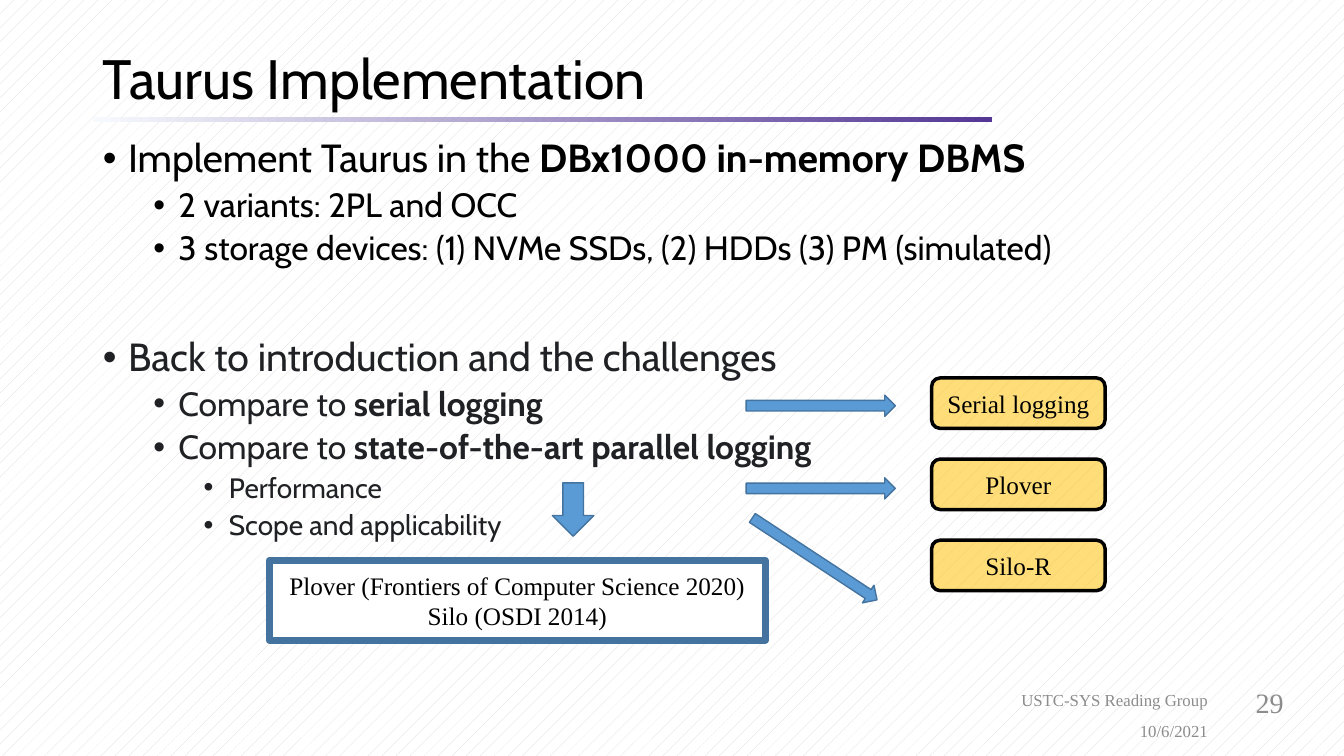
from lxml.etree import SubElement
from pptx import Presentation
from pptx.dml.color import RGBColor
from pptx.enum.dml import MSO_PATTERN
from pptx.enum.shapes import MSO_SHAPE
from pptx.enum.text import MSO_ANCHOR, MSO_AUTO_SIZE, PP_ALIGN
from pptx.oxml.ns import qn
from pptx.util import Inches, Pt

SERIF = "Times New Roman"
BLACK, DARK, GRAY = "000000", "202124", "8C8C8C"


def write(box, text, size, color, align, font=SERIF):
    frame = box.text_frame
    frame.word_wrap = True
    frame.auto_size = MSO_AUTO_SIZE.NONE
    frame.vertical_anchor = MSO_ANCHOR.MIDDLE
    frame.text = text
    for paragraph in frame.paragraphs:
        paragraph.alignment = align
        for span in paragraph.runs:
            span.font.name = font
            span.font.size = Pt(size)
            span.font.color.rgb = RGBColor.from_string(color)


def add_filled(kind, left, top, width, height, fill, line, line_width):
    shape = page.shapes.add_shape(kind, Inches(left), Inches(top), Inches(width), Inches(height))
    shape.shadow.inherit = False
    shape.fill.solid()
    shape.fill.fore_color.rgb = RGBColor.from_string(fill)
    shape.line.color.rgb = RGBColor.from_string(line)
    shape.line.width = Pt(line_width)
    return shape


deck = Presentation()
deck.slide_width, deck.slide_height = Inches(13.33), Inches(7.5)
page = deck.slides.add_slide(deck.slide_layouts[1])
background = page.background.fill
background.patterned()
background.pattern = MSO_PATTERN.PERCENT_5
background.fore_color.rgb = RGBColor.from_string("D9D9D9")
background.back_color.rgb = RGBColor.from_string("FFFFFF")

# Title and its underline
title = page.shapes.title
title.left, title.top, title.width, title.height = map(Inches, (0.92, 0.43, 11.5, 0.75))
write(title, "Taurus Implementation", 39.6, BLACK, PP_ALIGN.LEFT, "Cabin")
title.text_frame.paragraphs[0].line_spacing = 0.9

underline = add_filled(MSO_SHAPE.RECTANGLE, 0.92, 1.16, 8.92, 0.05, "543795", "543795", 1)
underline.line.fill.background()
underline.fill.gradient()
underline.fill.gradient_angle = 0
for stop, color in zip(underline.fill.gradient_stops, ("F7FAFD", "543795")):
    stop.color.rgb = RGBColor.from_string(color)

# Bullets: level, space before, colour, plain text, bold text
bullets = [
    (0, 0, BLACK, "Implement Taurus in the ", "DBx1000 in-memory DBMS"),
    (1, 5, BLACK, "2 variants: 2PL and OCC", ""),
    (1, 5, BLACK, "3 storage devices: (1) NVMe SSDs, (2) HDDs (3) PM (simulated)", ""),
    (0, 50, DARK, "Back to introduction and the challenges", ""),
    (1, 5, DARK, "Compare to ", "serial logging"),
    (1, 5, DARK, "Compare to ", "state-of-the-art parallel logging"),
    (2, 5, DARK, "Performance", ""),
    (2, 5, DARK, "Scope and applicability", ""),
]
body = page.placeholders[1]
body.left, body.top, body.width, body.height = map(Inches, (0.92, 1.33, 11.5, 5.43))
frame = body.text_frame
frame.word_wrap = True
frame.auto_size = MSO_AUTO_SIZE.NONE
for index, (level, space, color, plain, bold) in enumerate(bullets):
    paragraph = frame.add_paragraph() if index else frame.paragraphs[0]
    paragraph.level = level
    paragraph.line_spacing = 0.9
    paragraph.space_before = Pt(space)
    properties = paragraph._p.get_or_add_pPr()
    properties.set("marL", str(Inches(0.25 + 0.5 * level)))
    properties.set("indent", str(Inches(-0.25)))
    SubElement(properties, qn("a:buFont")).set("typeface", "Arial")
    SubElement(properties, qn("a:buChar")).set("char", "•")
    for text, is_bold in ((plain, False), (bold, True)):
        if text:
            span = paragraph.add_run()
            span.text = text
            span.font.name = "Cabin"
            span.font.size = Pt(28 - 4 * level)
            span.font.bold = is_bold
            span.font.color.rgb = RGBColor.from_string(color)

# Footer
for text, size, left, top, width, height in (
    ("29", 20, 9.83, 6.81, 3, 0.32),
    ("USTC-SYS Reading Group", 12, 7.58, 6.81, 4.5, 0.26),
    ("10/6/2021", 12, 9.08, 7.11, 3, 0.28),
):
    footer = page.shapes.add_textbox(Inches(left), Inches(top), Inches(width), Inches(height))
    write(footer, text, size, GRAY, PP_ALIGN.RIGHT)

# Block arrows
for kind, left, top, width, height, angle in (
    (MSO_SHAPE.RIGHT_ARROW, 7.4, 3.92, 1.48, 0.21, 0),
    (MSO_SHAPE.RIGHT_ARROW, 7.4, 4.74, 1.48, 0.21, 0),
    (MSO_SHAPE.RIGHT_ARROW, 7.34, 5.44, 1.48, 0.21, 33.3),
    (MSO_SHAPE.DOWN_ARROW, 5.48, 4.79, 0.41, 0.53, 0),
):
    arrow = add_filled(kind, left, top, width, height, "5B9BD5", "43739E", 1)
    arrow.rotation = angle

# Logging schemes
for index, name in enumerate(("Serial logging", "Plover", "Silo-R")):
    scheme = add_filled(MSO_SHAPE.ROUNDED_RECTANGLE, 9.24, 3.75 + 0.805 * index, 1.72, 0.5,
                        "FFC000", BLACK, 2.5)
    fill_color = scheme._element.spPr.find(qn("a:solidFill"))[0]
    SubElement(fill_color, qn("a:alpha")).set("val", "52000")
    write(scheme, name, 18, BLACK, PP_ALIGN.CENTER)

papers = add_filled(MSO_SHAPE.RECTANGLE, 2.67, 5.56, 4.92, 0.79, "FFFFFF", "43739E", 5)
write(papers, "Plover (Frontiers of Computer Science 2020)\nSilo (OSDI 2014)", 18, BLACK,
      PP_ALIGN.CENTER)

deck.save("out.pptx")
